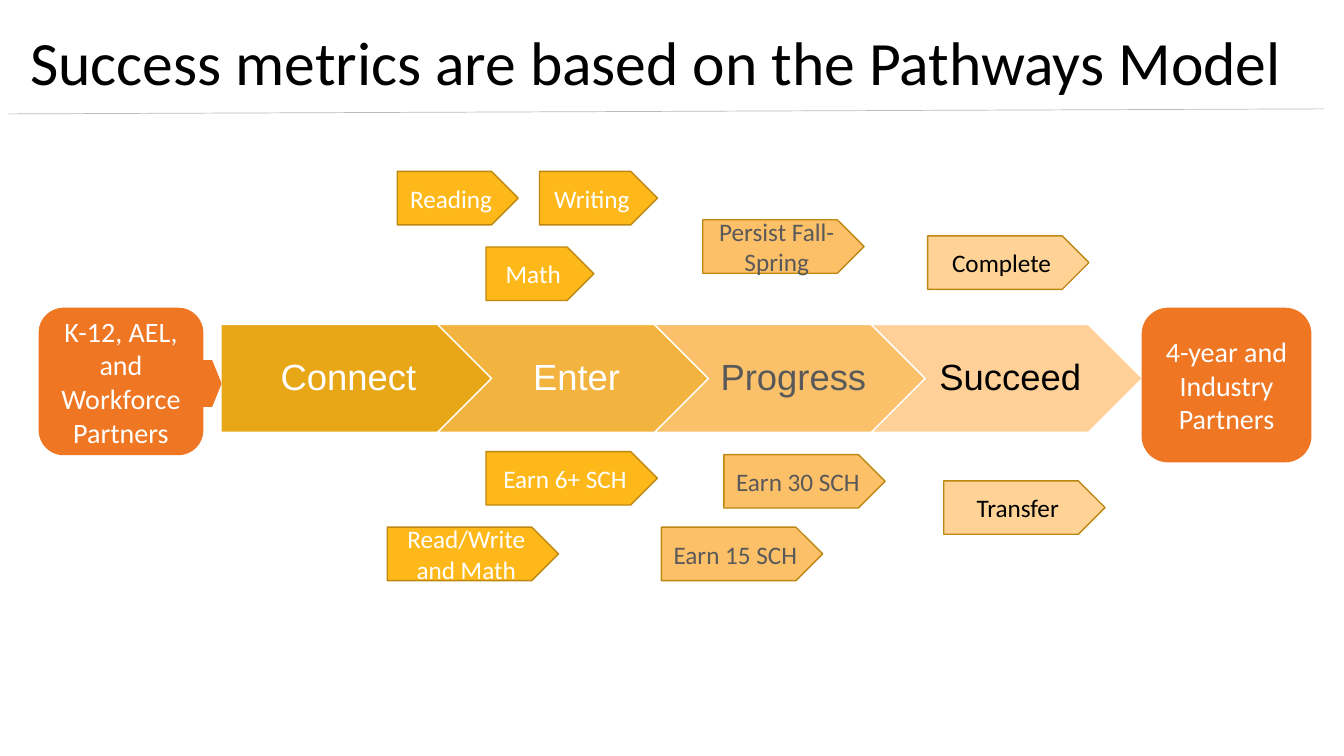
from pptx import Presentation
from pptx.dml.color import RGBColor
from pptx.enum.shapes import MSO_CONNECTOR, MSO_SHAPE
from pptx.enum.text import MSO_ANCHOR, MSO_AUTO_SIZE, PP_ALIGN
from pptx.oxml import parse_xml
from pptx.util import Inches, Pt

PLATE, CHEVRON = MSO_SHAPE.PENTAGON, MSO_SHAPE.CHEVRON
ROUND, LINE = MSO_SHAPE.ROUNDED_RECTANGLE, MSO_CONNECTOR.STRAIGHT
MIDDLE, FIXED = MSO_ANCHOR.MIDDLE, MSO_AUTO_SIZE.NONE
LEFT, CENTER = PP_ALIGN.LEFT, PP_ALIGN.CENTER
WHITE, BLACK, GRAY = "FFFFFF", "000000", "595959"
ORANGE, BROWN = "EF7622", "BD8812"

TITLE = "Success metrics are based on the Pathways Model"
STAGES = [
    ("Connect", PLATE, "E7A717", WHITE),
    ("Enter", CHEVRON, "F3B33F", WHITE),
    ("Progress", CHEVRON, "FAC16A", GRAY),
    ("Succeed", CHEVRON, "FFD198", BLACK),
]
ENDS = [
    ("K-12, AEL, and Workforce Partners", ROUND, (2.93, 40.8, 12.15, 19.33)),
    ("4-year and Industry Partners", ROUND, (85, 40.8, 12.53, 20.27)),
    ("", PLATE, (15.08, 47.73, 1.35, 6)),
]
METRICS = {
    ("FFB819", WHITE): [
        ("Math", 36.16, 32.67, 8.03),
        ("Reading", 29.56, 22.67, 9),
        ("Writing", 40.14, 22.67, 8.78),
        ("Read/Write and Math", 28.81, 69.73, 12.75),
        ("Earn 6+ SCH", 36.16, 59.73, 12.75),
    ],
    ("FCC068", GRAY): [
        ("Persist Fall-Spring", 52.29, 29.07, 12),
        ("Earn 15 SCH", 49.21, 69.73, 12),
        ("Earn 30 SCH", 53.86, 60.13, 12),
    ],
    ("FFD296", BLACK): [
        ("Complete", 69.02, 31.2, 12),
        ("Transfer", 70.22, 63.6, 12),
    ],
}

deck = Presentation()
deck.slide_width, deck.slide_height = Inches(13.33), Inches(7.5)
slide = deck.slides.add_slide(deck.slide_layouts[5])


def place(*shares):
    sides = (deck.slide_width, deck.slide_height) * 2
    return [int(side * share / 100) for side, share in zip(sides, shares)]


def color(code):
    return RGBColor.from_string(code)


def assign(item, values):
    for name, value in values.items():
        setattr(item, name, value)


def write(shape, text, size, ink, face="Calibri", align=CENTER, lead=1, **frame):
    box = shape.text_frame
    assign(box, {"word_wrap": True, "vertical_anchor": MIDDLE, **frame})
    box.text = text
    para = box.paragraphs[0]
    assign(para, {"alignment": align, "line_spacing": lead})
    assign(para.font, {"name": face, "size": Pt(size)})
    para.font.color.rgb = color(ink)


def draw(kind, area, fill, edge):
    shape = slide.shapes.add_shape(kind, *place(*area))
    shape.shadow.inherit = False
    shape.fill.solid()
    shape.fill.fore_color.rgb = color(fill)
    shape.line.color.rgb = color(edge)
    shape.line.width = Pt(1)
    return shape


head = slide.shapes.title
assign(head, dict(zip(("left", "top", "width", "height"),
                      place(1.5, -0.93, 98.42, 19.33))))
write(head, TITLE, 44, BLACK, align=LEFT, lead=0.9, auto_size=FIXED)

for col, (text, kind, fill, ink) in enumerate(STAGES):
    stage = draw(kind, (16.43 + col * 16.13, 42.93, 20.18, 14.27), fill, WHITE)
    inset = Inches(0.11 if col else 0.15)
    write(stage, text, 26, ink, face="Arial", lead=0.9, word_wrap=False,
          margin_left=inset, margin_right=Inches(0.04),
          margin_top=Inches(0.08), margin_bottom=Inches(0.08))

for text, kind, area in ENDS:
    end = draw(kind, area, ORANGE, ORANGE)
    if text:
        write(end, text, 20, WHITE)

for (fill, ink), tags in METRICS.items():
    for text, left, top, width in tags:
        write(draw(PLATE, (left, top, width, 7.07), fill, BROWN), text, 18, ink)

rule = slide.shapes.add_connector(LINE, *place(0.6, 15.07, 98.5, 14.4))
rule.line.color.rgb = color("B9B9BB")
rule.line.width = Pt(0.5)
rule._element.spPr.append(parse_xml(
    '<a:effectLst xmlns:a="http://schemas.openxmlformats.org/drawingml/2006/main"/>'))

deck.save("out.pptx")
